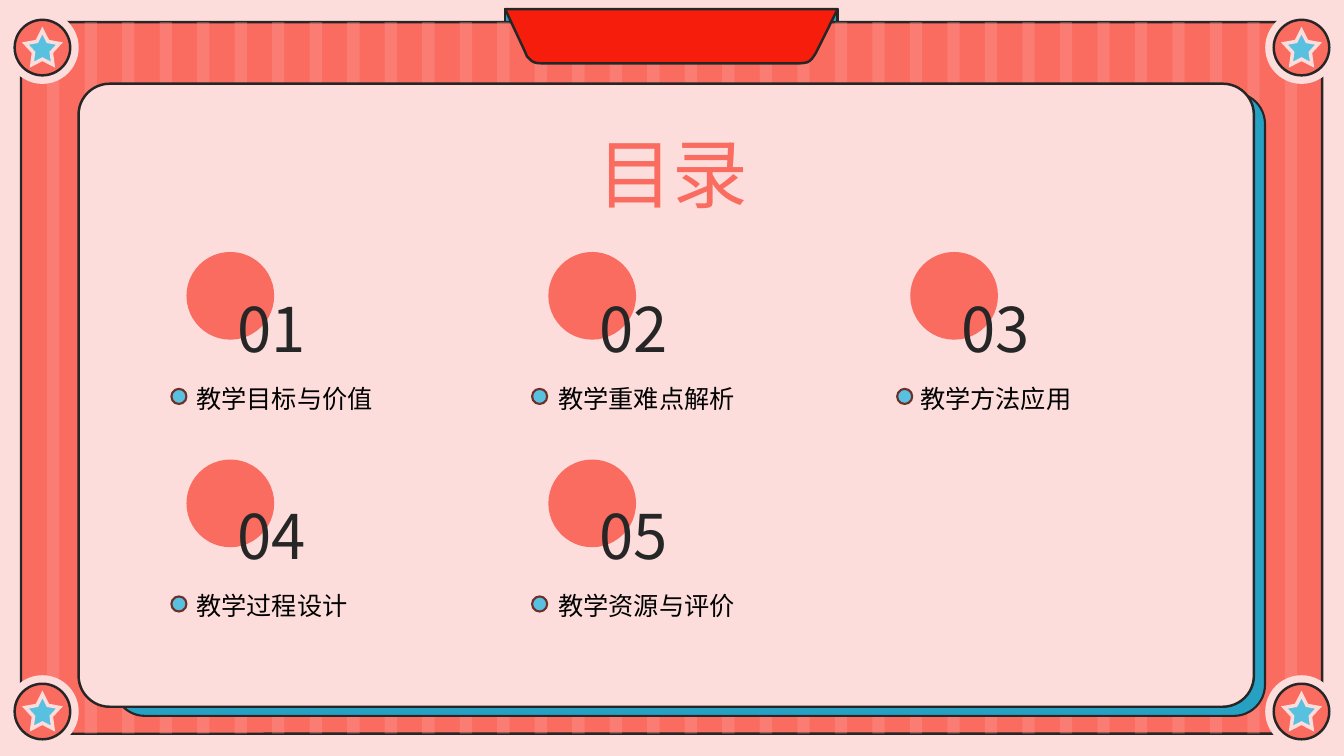
from dataclasses import dataclass

from lxml.etree import SubElement
from pptx import Presentation
from pptx.dml.color import RGBColor
from pptx.enum.shapes import MSO_SHAPE as Preset
from pptx.enum.text import MSO_AUTO_SIZE as AutoSize, PP_ALIGN as Align
from pptx.oxml.ns import qn
from pptx.util import Cm, Pt


@dataclass(frozen=True)
class Theme:
    """Colours, type sizes and line weights of the slide."""
    font: str = "Noto Sans CJK SC"
    paper: str = "FCDDDB"
    coral: str = "FA6B60"
    stripe: str = "FCA6A0"
    teal: str = "26A1C4"
    sky: str = "58C1DF"
    red: str = "F71D0C"
    ink: str = "262626"
    maroon: str = "6E2F2A"
    black: str = "000000"
    title_size: float = 54
    number_size: float = 44
    topic_size: float = 18
    thin: float = 1.5
    medium: float = 1.75
    thick: float = 2.5


THEME = Theme()
PAGE_WIDTH, PAGE_HEIGHT = 33.87, 19.05
FRAME_TOP, FRAME_HEIGHT = 0.56, 17.93
FIRST_COLUMN, COLUMN_PITCH = 4.7, 9.12
FIRST_ROW, ROW_PITCH = 6.35, 5.23
DOT_LEFTS = (4.32, 13.41, 22.61)
TOPICS = (
    ("教学目标与价值", 8.36),
    ("教学重难点解析", 7.04),
    ("教学方法应用", 8.08),
    ("教学过程设计", 8.61),
    ("教学资源与评价", 8.36),
)
TAB_OUTLINE = (
    (12.73, 0.23), (21.11, 0.23), (20.57, 1.32), (20.52, 1.4), (20.47, 1.47),
    (20.41, 1.53), (20.35, 1.57), (20.24, 1.59), (20.12, 1.6), (13.69, 1.6),
    (13.54, 1.59), (13.46, 1.57), (13.39, 1.53), (13.34, 1.48), (13.28, 1.42),
    (13.23, 1.3),
)


def paint(shape, fill, line=None, weight=THEME.medium):
    """Give a shape its fill and outline and remove its shadow."""
    shape.shadow.inherit = False
    shape.fill.solid()
    shape.fill.fore_color.rgb = RGBColor.from_string(fill)
    if line:
        shape.line.color.rgb = RGBColor.from_string(line)
        shape.line.width = Pt(weight)
    else:
        shape.line.fill.background()
    return shape


def add_figure(page, preset, left, top, width, height, fill, adjust=None, **outline):
    """Add a painted preset shape measured in centimetres."""
    shape = page.shapes.add_shape(preset, Cm(left), Cm(top), Cm(width), Cm(height))
    if adjust is not None:
        shape.adjustments[0] = adjust
    return paint(shape, fill, **outline)


def add_outline(page, contours, fill, **outline):
    """Add one painted freeform made of closed contours."""
    contours = [[(Cm(x), Cm(y)) for x, y in contour] for contour in contours]
    builder = page.shapes.build_freeform(*contours[0][0])
    for start, *corners in contours:
        builder.move_to(*start)
        builder.add_line_segments(corners, close=True)
    return paint(builder.convert_to_shape(), fill, **outline)


def add_text(page, text, left, top, width, height, size, color,
             align=Align.LEFT, spacing=1.1, grow=False):
    """Add a wrapped text box with a single formatted paragraph."""
    box = page.shapes.add_textbox(Cm(left), Cm(top), Cm(width), Cm(height))
    frame = box.text_frame
    frame.word_wrap = True
    frame.auto_size = AutoSize.SHAPE_TO_FIT_TEXT if grow else AutoSize.NONE
    para = frame.paragraphs[0]
    para.alignment = align
    para.line_spacing = spacing
    span = para.add_run()
    span.text = text
    span.font.size = Pt(size)
    span.font.color.rgb = RGBColor.from_string(color)
    span.font.name = THEME.font
    SubElement(span.font._element, qn("a:ea"), typeface=THEME.font)


def add_stripes(page, count=34, left=1.19, right=32.69, width=0.31):
    """Add the evenly spaced translucent stripes of the frame."""
    pitch = (right - left - width) / (count - 1)
    top, bottom = FRAME_TOP, FRAME_TOP + FRAME_HEIGHT
    starts = [left + index * pitch for index in range(count)]
    contours = [
        ((x, top), (x + width, top), (x + width, bottom), (x, bottom)) for x in starts
    ]
    stripes = add_outline(page, contours, THEME.stripe)
    color = stripes._element.spPr.find(qn("a:solidFill"))[0]
    SubElement(color, qn("a:alpha"), val="30000")


def add_frame(page):
    """Add the background and the striped frame."""
    add_figure(page, Preset.RECTANGLE, 0, 0, PAGE_WIDTH, PAGE_HEIGHT, THEME.paper)
    add_figure(page, Preset.RECTANGLE, 12.73, 0.23, 8.38, 0.97, THEME.teal, line=THEME.ink)
    add_figure(page, Preset.ROUNDED_RECTANGLE, 0.53, FRAME_TOP, 32.79, FRAME_HEIGHT,
               THEME.coral, adjust=0.04, line=THEME.ink)
    add_stripes(page)


def add_panel(page):
    """Add the inner panel over its teal backing, and the tab above it."""
    layers = (
        (2.87, 2.34, 29.01, THEME.teal, THEME.thin),
        (1.98, 2.11, 29.62, THEME.paper, THEME.medium),
    )
    for left, top, width, fill, weight in layers:
        add_figure(page, Preset.ROUNDED_RECTANGLE, left, top, width, 15.7, fill,
                   adjust=0.05, line=THEME.ink, weight=weight)
    add_outline(page, [TAB_OUTLINE], THEME.red, line=THEME.ink)


def add_topic(page, index, topic, width):
    """Add one numbered entry of the contents grid."""
    row, column = divmod(index, len(DOT_LEFTS))
    left = FIRST_COLUMN + column * COLUMN_PITCH
    top = FIRST_ROW + row * ROW_PITCH
    add_figure(page, Preset.OVAL, left, top, 2.21, 2.21, THEME.coral)
    add_text(page, f"{index + 1:02}", left + 0.08, top + 0.66, 4.14, 2.57,
             THEME.number_size, THEME.ink, align=Align.CENTER)
    add_text(page, topic, left, top + 3.1, width, 2.13, THEME.topic_size, THEME.black)
    add_figure(page, Preset.OVAL, DOT_LEFTS[column], top + 3.45, 0.38, 0.38, THEME.sky,
               line=THEME.maroon, weight=THEME.thin)


def add_centered(page, preset, center_x, center_y, size, fill, **style):
    """Add a square-bounded figure around a centre point."""
    return add_figure(page, preset, center_x - size / 2, center_y - size / 2,
                      size, size, fill, **style)


def add_badge(page, center_x, center_y):
    """Add a round corner badge with a sharp-pointed star."""
    center = center_x, center_y
    add_centered(page, Preset.OVAL, *center, 1.83, THEME.paper)
    add_centered(page, Preset.OVAL, *center, 1.4, THEME.coral, line=THEME.ink)
    star = add_centered(page, Preset.STAR_5_POINT, *center, 0.86, THEME.sky,
                        adjust=0.26, line=THEME.paper, weight=THEME.thick)
    SubElement(star._element.spPr.find(qn("a:ln")), qn("a:miter"), lim="800000")


def main():
    """Build the contents slide and save it."""
    deck = Presentation()
    deck.slide_width, deck.slide_height = Cm(PAGE_WIDTH), Cm(PAGE_HEIGHT)
    page = deck.slides.add_slide(deck.slide_layouts[6])
    add_frame(page)
    add_panel(page)
    add_text(page, "目录", 6.48, 2.39, 20.96, 2.72, THEME.title_size, THEME.coral,
             align=Align.CENTER, spacing=1.3, grow=True)
    for index, (topic, width) in enumerate(TOPICS):
        add_topic(page, index, topic, width)
    for center_x in (1.07, 32.8):
        for center_y in (1.2, 17.93):
            add_badge(page, center_x, center_y)
    deck.save("out.pptx")


if __name__ == "__main__":
    main()
